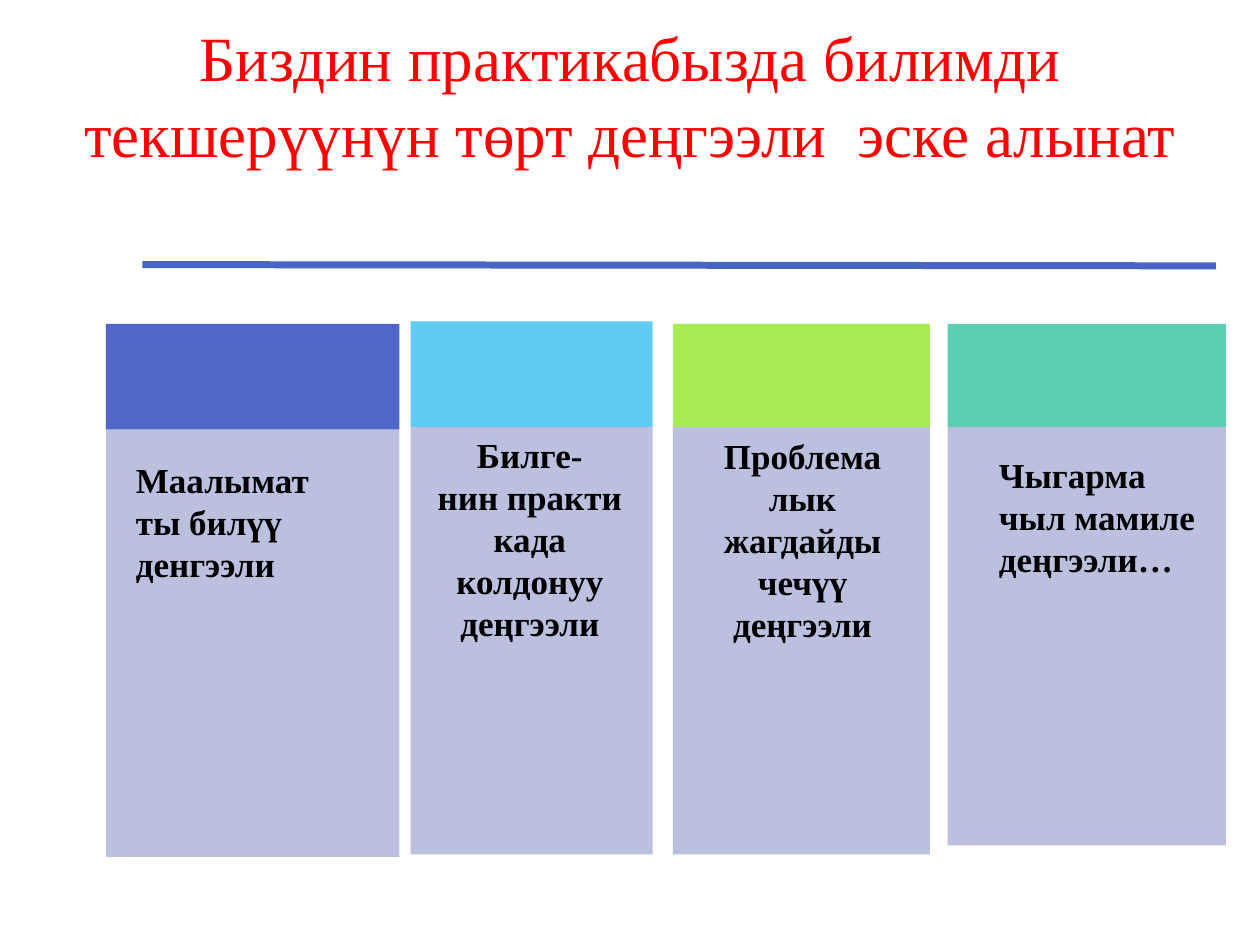
"""Build a slide with four coloured columns naming the levels of knowledge assessment."""
import pptx
import pptx.dml.color
import pptx.enum.shapes
import pptx.enum.text
import pptx.oxml
import pptx.util

THEME = {
    "font": "Times New Roman",
    "title_size": 36,
    "label_size": 20,
    "title": "FF0000",
    "label": "000000",
    "rule": "4963C7",
    "panel": "BAC0DE",
}
LEFT = pptx.enum.text.PP_ALIGN.LEFT
CENTER = pptx.enum.text.PP_ALIGN.CENTER
RECTANGLE = pptx.enum.shapes.MSO_SHAPE.RECTANGLE
COLUMNS, ROWS = 100, 75

presentation = pptx.Presentation()
presentation.slide_width = pptx.util.Inches(10)
presentation.slide_height = pptx.util.Inches(7.5)
slide = presentation.slides.add_slide(presentation.slide_layouts[6])
column_width = presentation.slide_width / COLUMNS
row_height = presentation.slide_height / ROWS


def place(left, top, width, height):
    return (
        round(left * column_width),
        round(top * row_height),
        round(width * column_width),
        round(height * row_height),
    )


def add_text(box, lines, alignment, size, color, bold):
    shape = slide.shapes.add_textbox(*place(*box))
    shape.text_frame.word_wrap = True
    shape.text_frame.text = "\n".join(lines)
    for paragraph in shape.text_frame.paragraphs:
        paragraph.alignment = alignment
        for run in paragraph.runs:
            run.font.name = THEME["font"]
            run.font.size = pptx.util.Pt(size)
            run.font.bold = bold
            run.font.color.rgb = pptx.dml.color.RGBColor.from_string(color)


add_text(
    (1.2, 1, 97.6, 16.1),
    ["Биздин практикабызда билимди текшерүүнүн төрт деңгээли  эске алынат"],
    CENTER, THEME["title_size"], THEME["title"], False,
)

left, top, width, height = place(11.3, 21, 85.2, 0.1)
rule = slide.shapes.add_connector(
    pptx.enum.shapes.MSO_CONNECTOR.STRAIGHT, left, top, left + width, top + height
)
rule.line.width = pptx.util.Pt(4)
rule.line.color.rgb = pptx.dml.color.RGBColor.from_string(THEME["rule"])
rule._element.spPr.append(pptx.oxml.parse_xml(
    '<a:effectLst xmlns:a="http://schemas.openxmlformats.org/drawingml/2006/main"/>'
))

levels = [
    (8.4, 23.3, 25.7, 34.1, 68, "4E67C8", (9.8, 35.9, 20.5, 11.1), LEFT,
     ["Маалымат", "ты билүү денгээли"]),
    (32.6, 19.2, 25.5, 33.9, 67.8, "5ECCF3", (33.1, 33.9, 17.9, 21.9), CENTER,
     ["Билге-", "нин практи", "када колдонуу деңгээли"]),
    (53.4, 20.4, 25.7, 33.9, 67.8, "A7EA52", (54.7, 34, 18, 20.9), CENTER,
     ["Проблема", "лык жагдайды чечүү деңгээли"]),
    (75.2, 22.1, 25.7, 33.9, 67.1, "5DCEAF", (78.3, 35.5, 18.2, 11.1), LEFT,
     ["Чыгарма", "чыл мамиле деңгээли…"]),
]

for left, width, top, split, bottom, accent, box, alignment, lines in levels:
    group = slide.shapes.add_group_shape()
    for start, end, color in ((top, split, accent), (split, bottom, THEME["panel"])):
        shape = group.shapes.add_shape(RECTANGLE, *place(left, start, width, end - start))
        shape.shadow.inherit = False
        shape.fill.solid()
        shape.fill.fore_color.rgb = pptx.dml.color.RGBColor.from_string(color)
        shape.line.fill.background()
    add_text(box, lines, alignment, THEME["label_size"], THEME["label"], True)

presentation.save("out.pptx")
